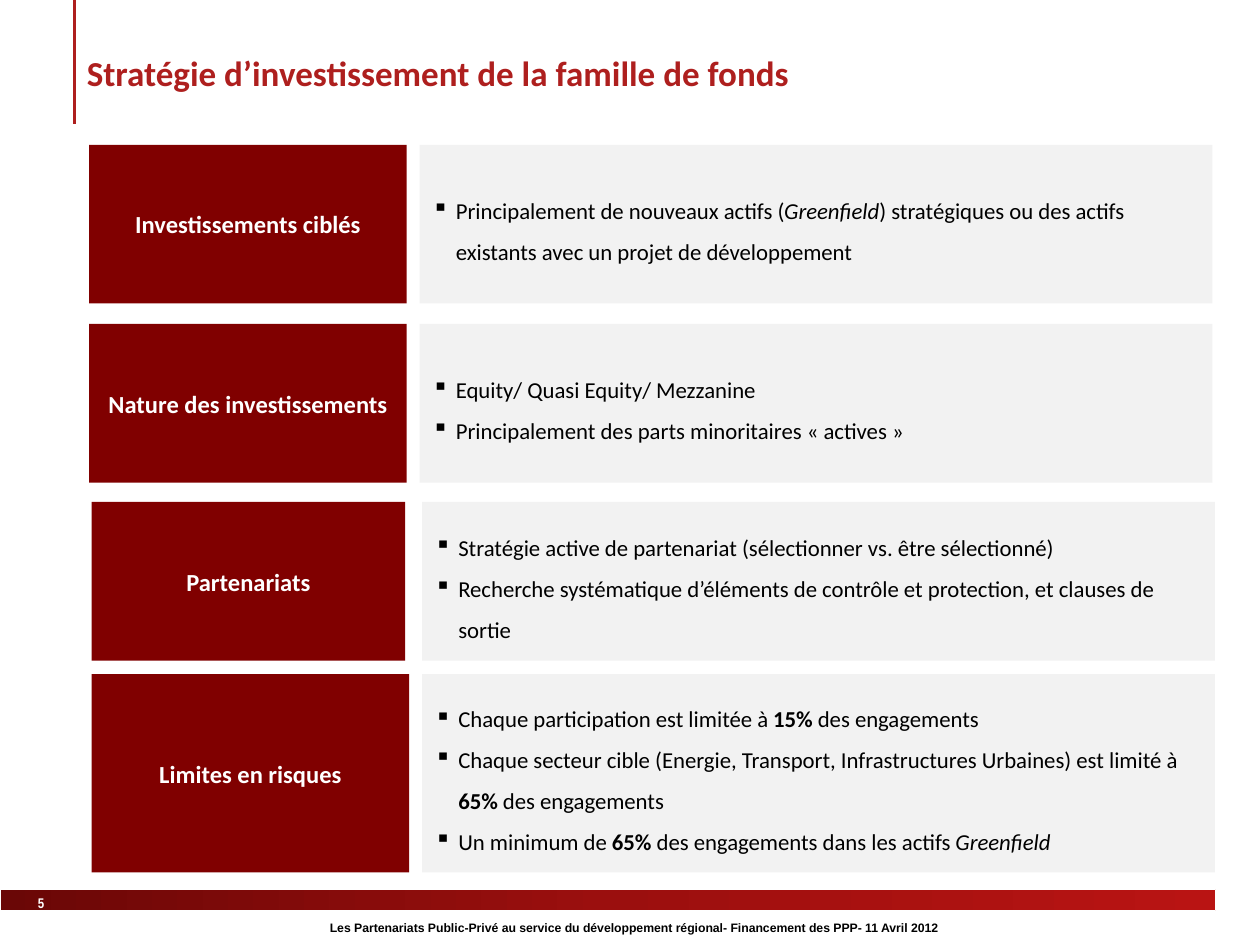
from copy import deepcopy
from dataclasses import dataclass

from lxml import etree
from pptx import Presentation
from pptx.dml.color import RGBColor
from pptx.enum.shapes import MSO_CONNECTOR, MSO_SHAPE
from pptx.enum.text import MSO_ANCHOR, PP_ALIGN
from pptx.oxml.ns import qn
from pptx.util import Cm, Pt

RECTANGLE = MSO_SHAPE.RECTANGLE
STRAIGHT = MSO_CONNECTOR.STRAIGHT
MIDDLE = MSO_ANCHOR.MIDDLE
LEFT, CENTER, RIGHT = PP_ALIGN.LEFT, PP_ALIGN.CENTER, PP_ALIGN.RIGHT


@dataclass(frozen=True)
class Theme:
    accent: str = "AE1F1E"
    label: str = "800000"
    panel: str = "F2F2F2"
    ink: str = "000000"
    paper: str = "FFFFFF"
    band: tuple = ("6A0706", "9B0F0E", "B91413")
    body_font: str = "Calibri"
    footer_font: str = "Arial"
    number_font: str = "Arial Narrow"
    title_size: float = 20
    label_size: float = 14
    body_size: float = 13
    number_size: float = 8
    footer_size: float = 7


THEME = Theme()
BULLET_INDENT = Cm(0.48)
LABEL_WIDTH, PANEL_WIDTH, PANEL_OFFSET = 6.4, 15.98, 6.66

# Each row: left, top, height, label width, label, bullets made of (text, style) pieces
ROWS = [
    (1.8, 2.92, 3.2, LABEL_WIDTH, "Investissements ciblés", [
        [("Principalement de nouveaux actifs (", ""), ("Greenfield", "i"),
         (") stratégiques ou des actifs existants avec un projet de développement", "")],
    ]),
    (1.8, 6.53, 3.2, LABEL_WIDTH, "Nature des investissements", [
        [("Equity/ Quasi Equity/ Mezzanine", "")],
        [("Principalement des parts minoritaires « actives »", "")],
    ]),
    (1.85, 10.12, 3.2, 6.32, "Partenariats", [
        [("Stratégie active de partenariat (sélectionner vs. être sélectionné)", "")],
        [("Recherche systématique d’éléments de contrôle et protection, et clauses de sortie", "")],
    ]),
    (1.85, 13.59, 4, LABEL_WIDTH, "Limites en risques", [
        [("Chaque participation est limitée à ", ""), ("15%", "b"), (" des engagements", "")],
        [("Chaque secteur cible (Energie, Transport, Infrastructures Urbaines) est limité à ", ""),
         ("65%", "b"), (" des engagements", "")],
        [("Un minimum de ", ""), ("65%", "b"),
         (" des engagements dans les actifs ", ""), ("Greenfield", "i")],
    ]),
]


def rgb(value):
    return RGBColor.from_string(value)


def style_run(run, font, size, color, bold=False, italic=False):
    run.font.name = font
    run.font.size = Pt(size)
    run.font.color.rgb = rgb(color)
    run.font.bold = bold
    run.font.italic = italic


def add_block(slide, left, top, width, height, color):
    block = slide.shapes.add_shape(RECTANGLE, Cm(left), Cm(top), Cm(width), Cm(height))
    block.shadow.inherit = False
    block.fill.solid()
    block.fill.fore_color.rgb = rgb(color)
    block.line.fill.background()
    block.text_frame.word_wrap = True
    block.text_frame.vertical_anchor = MIDDLE
    return block


def add_caption(slide, box, text, font, size, color, align=LEFT, margins=(0.25, 0.13)):
    frame = slide.shapes.add_textbox(*map(Cm, box)).text_frame
    frame.word_wrap = True
    frame.margin_left = frame.margin_right = Cm(margins[0])
    frame.margin_top = frame.margin_bottom = Cm(margins[1])
    frame.text = text
    frame.paragraphs[0].alignment = align
    style_run(frame.paragraphs[0].runs[0], font, size, color, bold=True)


def add_label(slide, left, top, width, height, text):
    frame = add_block(slide, left, top, width, height, THEME.label).text_frame
    frame.text = text
    frame.paragraphs[0].alignment = CENTER
    style_run(frame.paragraphs[0].runs[0], THEME.body_font, THEME.label_size,
              THEME.paper, bold=True)


def set_bullet(paragraph):
    properties = paragraph._p.get_or_add_pPr()
    properties.set("marL", str(BULLET_INDENT))
    properties.set("indent", str(-BULLET_INDENT))
    etree.SubElement(properties, qn("a:buChar")).set("char", "▪")


def add_panel(slide, left, top, height, bullets):
    frame = add_block(slide, left, top, PANEL_WIDTH, height, THEME.panel).text_frame
    for index, pieces in enumerate(bullets):
        paragraph = frame.add_paragraph() if index else frame.paragraphs[0]
        paragraph.alignment = LEFT
        paragraph.line_spacing = 1.5
        set_bullet(paragraph)
        for text, style in pieces:
            run = paragraph.add_run()
            run.text = text
            style_run(run, THEME.body_font, THEME.body_size, THEME.ink,
                      bold=style == "b", italic=style == "i")


def add_footer_band(slide):
    band = add_block(slide, 0, 17.93, 24.51, 0.43, THEME.label)
    band.line.color.rgb = rgb(THEME.paper)
    band.line.width = Pt(0.75)
    band.fill.gradient()
    band.fill.gradient_angle = 0
    first_stop = next(band._element.iter(qn("a:gs")))
    middle_stop = deepcopy(first_stop)
    middle_stop.set("pos", "50000")
    first_stop.addnext(middle_stop)
    for stop, color in zip(band.fill.gradient_stops, THEME.band):
        stop.color.rgb = rgb(color)


def add_title_rule(slide):
    rule = slide.shapes.add_connector(STRAIGHT, Cm(1.5), Cm(0), Cm(1.5), Cm(2.51))
    rule.line.color.rgb = rgb(THEME.accent)
    rule.line.width = Pt(1.5)
    etree.SubElement(rule._element.spPr, qn("a:effectLst"))


def main():
    deck = Presentation()
    deck.slide_width, deck.slide_height = Cm(25.4), Cm(19.05)
    slide = deck.slides.add_slide(deck.slide_layouts[6])

    add_footer_band(slide)
    add_caption(slide, (0.1, 17.93, 0.97, 0.66), "5", THEME.number_font,
                THEME.number_size, THEME.paper, RIGHT, (0.18, 0.1))
    add_title_rule(slide)
    add_caption(slide, (6.4, 18.42, 13.1, 0.56),
                "Les Partenariats Public-Privé au service du développement régional- "
                "Financement des PPP- 11 Avril 2012",
                THEME.footer_font, THEME.footer_size, THEME.ink)
    add_caption(slide, (1.5, 0.91, 22.4, 1.12),
                "Stratégie d’investissement de la famille de fonds",
                THEME.body_font, THEME.title_size, THEME.accent)

    for left, top, height, label_width, label, bullets in ROWS:
        add_label(slide, left, top, label_width, height, label)
        add_panel(slide, left + PANEL_OFFSET, top, height, bullets)

    deck.save("out.pptx")


if __name__ == "__main__":
    main()
